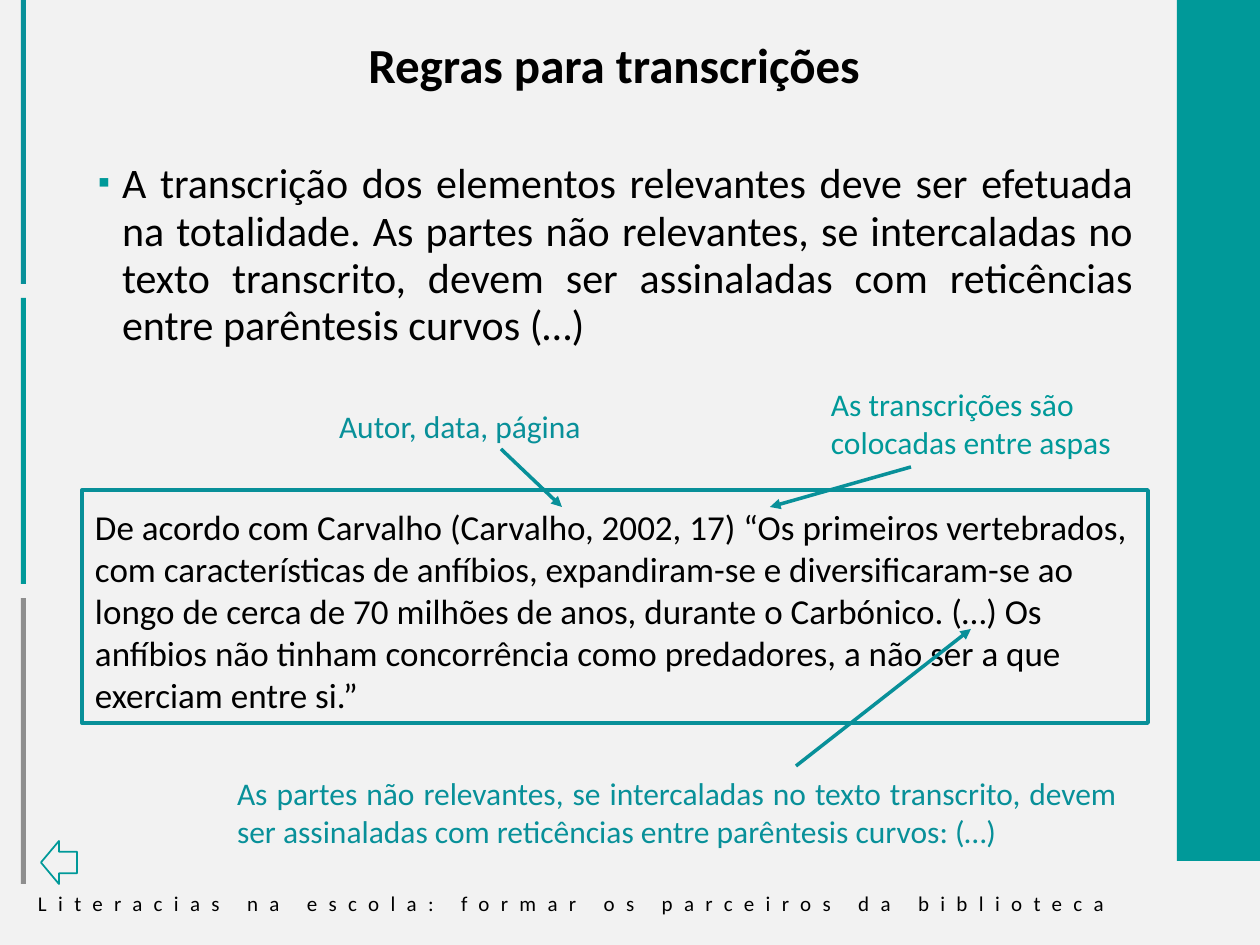
from lxml import etree
from pptx import Presentation
from pptx.dml.color import RGBColor
from pptx.enum.shapes import MSO_CONNECTOR, MSO_SHAPE
from pptx.enum.text import MSO_ANCHOR, MSO_AUTO_SIZE, PP_ALIGN
from pptx.oxml.ns import qn
from pptx.util import Emu, Pt

PX = 914400 // 126
STRAIGHT = MSO_CONNECTOR.STRAIGHT
RECTANGLE, LEFT_ARROW = MSO_SHAPE.RECTANGLE, MSO_SHAPE.LEFT_ARROW
LEFT, CENTER, JUSTIFY = PP_ALIGN.LEFT, PP_ALIGN.CENTER, PP_ALIGN.JUSTIFY
TOP, NO_AUTO_SIZE = MSO_ANCHOR.TOP, MSO_AUTO_SIZE.NONE

BLACK = RGBColor(0x00, 0x00, 0x00)
TEAL = RGBColor(0x00, 0x99, 0x99)
BLUE_TEAL = RGBColor(0x08, 0x90, 0x99)
GREY = RGBColor(0x8E, 0x8E, 0x8E)
BACKGROUND = RGBColor(0xF2, 0xF2, 0xF2)

# Content: places are left, top, width, height in px
TITLE = "Regras para transcrições"
TITLE_PLACE = (60, -1, 1108, 92)
RULE = (
    "A transcrição dos elementos relevantes deve ser efetuada na totalidade. "
    "As partes não relevantes, se intercaladas no texto transcrito, devem ser "
    "assinaladas com reticências entre parêntesis curvos (…)"
)
RULE_PLACE = (60, 154, 1086, 707)
FOOTER = "Literacias na escola: formar os parceiros da biblioteca"
FOOTER_PLACE = (25, 885, 1158, 38)
EXAMPLE = (
    "De acordo com Carvalho (Carvalho, 2002, 17) “Os primeiros vertebrados, "
    "com características de anfíbios, expandiram-se e diversificaram-se ao "
    "longo de cerca de 70 milhões de anos, durante o Carbónico. (…) Os "
    "anfíbios não tinham concorrência como predadores, a não ser a que "
    "exerciam entre si.”"
)
EXAMPLE_PLACE = (82, 490, 1066, 233)
# Text, place, colour, alignment, insets, arrow start, arrow end
CALLOUTS = [
    ("As transcrições são colocadas entre aspas", (818, 379, 330, 89),
     TEAL, LEFT, (13, 6, 13, 6), (911, 467), (770, 507)),
    ("Autor, data, página", (334, 402, 294, 47),
     BLUE_TEAL, JUSTIFY, (5, 5, 5, 5), (501, 449), (562, 507)),
    ("As partes não relevantes, se intercaladas no texto transcrito, devem "
     "ser assinaladas com reticências entre parêntesis curvos: (…)",
     (232, 769, 890, 106),
     BLUE_TEAL, JUSTIFY, (5, 5, 5, 5), (796, 766), (971, 629)),
]
SIDE_BLOCK = (1177, -1, 83, 862)
BACK_ARROW = (41, 841, 36, 43)
BAR_COLORS = [BLUE_TEAL, TEAL, GREY]
BAR_LEFT, BAR_TOP, BAR_WIDTH, BAR_HEIGHT, BAR_STEP = 21, -2, 5, 286, 300


def emu(lengths):
    return [Emu(length * PX) for length in lengths]


def set_text(shape, text, size, color, alignment=LEFT, insets=(13, 6, 13, 6),
             bold=False):
    """Fill a shape with one formatted paragraph and return the paragraph."""
    frame = shape.text_frame
    margins = dict(zip(
        ("margin_left", "margin_top", "margin_right", "margin_bottom"),
        emu(insets)))
    frame_format = {"word_wrap": True, "auto_size": NO_AUTO_SIZE,
                    "vertical_anchor": TOP, **margins}
    for name, value in frame_format.items():
        setattr(frame, name, value)
    paragraph = frame.paragraphs[0]
    paragraph.alignment = alignment
    run = paragraph.add_run()
    run.text = text
    font_format = {"name": "Calibri", "size": Pt(size), "bold": bold}
    for name, value in font_format.items():
        setattr(run.font, name, value)
    run.font.color.rgb = color
    return paragraph


def place_shape(shape, place):
    names = ("left", "top", "width", "height")
    for name, value in zip(names, emu(place)):
        setattr(shape, name, value)


def add_shape(slide, kind, place, fill=None, line=None, line_width=1):
    shape = slide.shapes.add_shape(kind, *emu(place))
    shape.shadow.inherit = False
    if fill is None:
        shape.fill.background()
    else:
        shape.fill.solid()
        shape.fill.fore_color.rgb = fill
    if line is None:
        shape.line.fill.background()
    else:
        shape.line.color.rgb = line
        shape.line.width = Pt(line_width)
    return shape


def add_arrow(slide, start, end):
    arrow = slide.shapes.add_connector(STRAIGHT, *emu(start + end))
    arrow.line.color.rgb = BLUE_TEAL
    arrow.line.width = Pt(2)
    line = arrow.line._get_or_add_ln()
    etree.SubElement(line, qn("a:tailEnd"), type="triangle")
    etree.SubElement(arrow._element.spPr, qn("a:effectLst"))


def add_bullet(paragraph):
    properties = paragraph._p.get_or_add_pPr()
    properties.set("marL", str(49 * PX))
    properties.set("indent", str(-24 * PX))
    color = etree.SubElement(properties, qn("a:buClr"))
    etree.SubElement(color, qn("a:srgbClr"), val=str(TEAL))
    etree.SubElement(properties, qn("a:buSzPct"), val="80000")
    etree.SubElement(properties, qn("a:buFont"), typeface="Calibri")
    etree.SubElement(properties, qn("a:buChar"), char="▪")


def main():
    presentation = Presentation()
    presentation.slide_width, presentation.slide_height = emu((1260, 945))
    slide = presentation.slides.add_slide(presentation.slide_layouts[1])
    slide.background.fill.solid()
    slide.background.fill.fore_color.rgb = BACKGROUND

    # Title and rule
    title, body = slide.placeholders
    place_shape(title, TITLE_PLACE)
    paragraph = set_text(title, TITLE, 28, BLACK, CENTER, bold=True)
    paragraph.line_spacing = 1.5
    place_shape(body, RULE_PLACE)
    paragraph = set_text(body, RULE, 24, BLACK, JUSTIFY)
    add_bullet(paragraph)
    paragraph.line_spacing = Pt(27)
    paragraph.space_before = Pt(0)

    # Side block, left bars and footer
    add_shape(slide, RECTANGLE, SIDE_BLOCK, fill=TEAL)
    for index, color in enumerate(BAR_COLORS):
        top = BAR_TOP + index * BAR_STEP
        add_shape(slide, RECTANGLE, (BAR_LEFT, top, BAR_WIDTH, BAR_HEIGHT),
                  fill=color)
    footer = slide.shapes.add_textbox(*emu(FOOTER_PLACE))
    paragraph = set_text(footer, FOOTER, 12, BLACK)
    paragraph.runs[0]._r.get_or_add_rPr().set("spc", "650")

    # Framed example
    example = add_shape(slide, RECTANGLE, EXAMPLE_PLACE, line=BLUE_TEAL,
                        line_width=2.25)
    set_text(example, EXAMPLE, 20, BLACK, insets=(13, 15, 13, 6))

    # Callouts with their arrows
    for text, place, color, alignment, insets, start, end in CALLOUTS:
        callout = slide.shapes.add_textbox(*emu(place))
        set_text(callout, text, 18, color, alignment, insets)
        add_arrow(slide, start, end)

    # Back arrow
    add_shape(slide, LEFT_ARROW, BACK_ARROW, line=TEAL)

    presentation.save("out.pptx")


if __name__ == "__main__":
    main()
